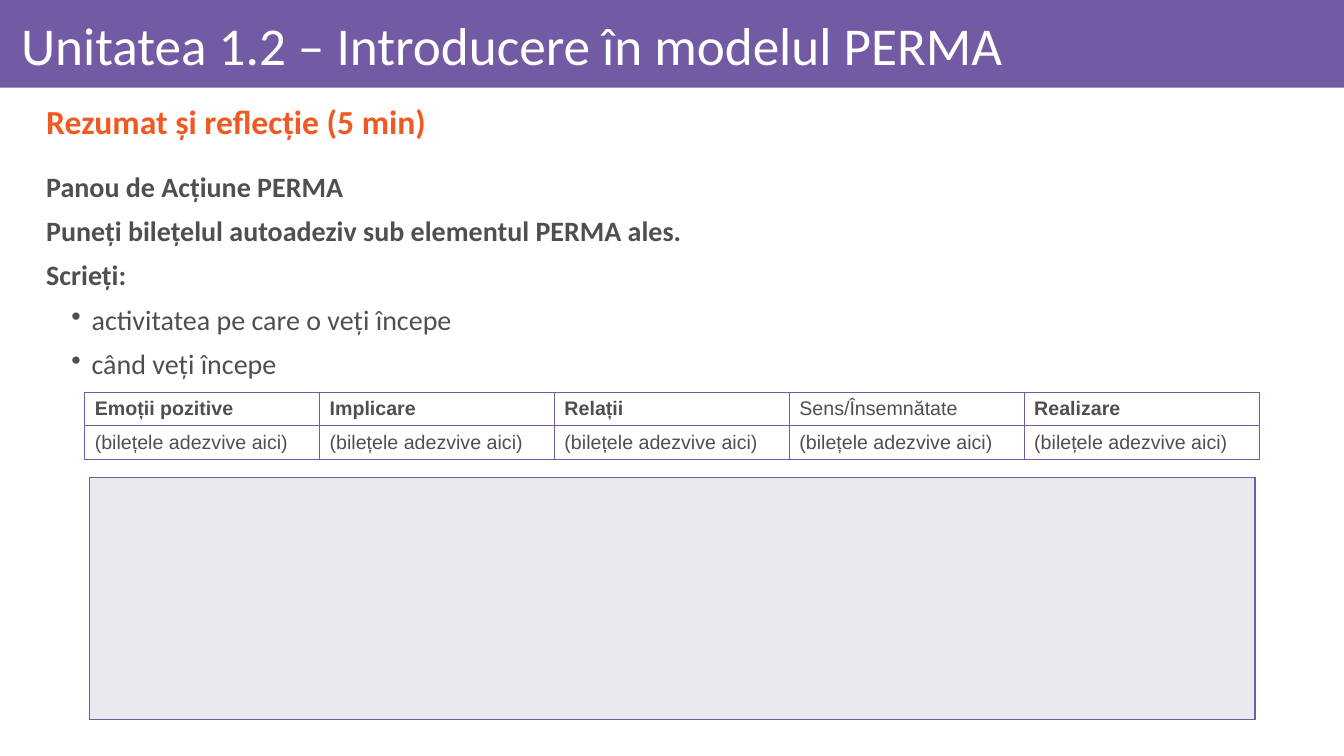
from dataclasses import dataclass

import pptx
import pptx.dml.color
import pptx.enum.shapes
import pptx.enum.text
import pptx.oxml.ns
import pptx.util
from lxml import etree

ALIGN = pptx.enum.text.PP_ALIGN
ANCHOR = pptx.enum.text.MSO_ANCHOR
Inches = pptx.util.Inches
SLIDE_WIDTH, SLIDE_HEIGHT = Inches(13.333), Inches(7.5)


@dataclass(frozen=True)
class Theme:
    purple: str = "735AA5"
    orange: str = "F05A22"
    grey: str = "4F4F50"
    white: str = "FFFFFF"
    lavender: str = "EBE9F0"
    text_font: str = "Calibri"
    table_font: str = "Arial"
    title_size: int = 38
    heading_size: int = 24
    body_size: int = 20
    table_size: int = 14


THEME = Theme()

# Boxes: left, top, width, height in percent of the slide
BANNER = (0, 0, 100, 11.6)
TITLE = (0.83, 1.2, 97.95, 10.4)
HEADING = (0.83, 12.4, 97.95, 8)
BODY = (0.83, 22.27, 96.08, 77.73)
ELEMENTS = (6.3, 51.87, 87.38, 8.53)
BOARD = (6.68, 63.2, 86.7, 32)

INSTRUCTIONS = [
    "Panou de Acțiune PERMA",
    "Puneți bilețelul autoadeziv sub elementul PERMA ales.",
    "Scrieți:",
]
BULLETS = ["activitatea pe care o veți începe", "când veți începe"]
PERMA = ["Emoții pozitive", "Implicare", "Relații", "Sens/Însemnătate", "Realizare"]
PLAIN_HEADER = "Sens/Însemnătate"
STICKY_HINT = "(bilețele adezvive aici)"


def place(box):
    left, top, width, height = (share / 100 for share in box)
    return (int(left * SLIDE_WIDTH), int(top * SLIDE_HEIGHT),
            int(width * SLIDE_WIDTH), int(height * SLIDE_HEIGHT))


def color(value):
    return pptx.dml.color.RGBColor.from_string(value)


def apply(target, values):
    for name, value in values.items():
        setattr(target, name, value)


def write(paragraph, text, size, text_color, font=THEME.text_font, bold=False):
    run = paragraph.add_run()
    run.text = text
    apply(run.font, {"size": pptx.util.Pt(size), "name": font, "bold": bold})
    run.font.color.rgb = color(text_color)


def indent(paragraph, margin, first_line, bullet=None):
    properties = paragraph._p.get_or_add_pPr()
    properties.set("marL", str(Inches(margin)))
    properties.set("indent", str(Inches(first_line)))
    if bullet:
        mark = etree.SubElement(properties, pptx.oxml.ns.qn("a:buChar"))
        mark.set("char", bullet)


def add_text_frame(slide, box, **values):
    frame = slide.shapes.add_textbox(*place(box)).text_frame
    apply(frame, {"word_wrap": True, **values})
    return frame


def add_paragraph(frame, first, **values):
    paragraph = frame.paragraphs[0] if first else frame.add_paragraph()
    apply(paragraph, {"line_spacing": 0.9, **values})
    return paragraph


def add_plain_table(slide, box, rows, columns, border_width):
    """Table with thin purple borders and no style bands."""
    table = slide.shapes.add_table(rows, columns, *place(box)).table
    apply(table, {"first_row": False, "horz_banding": False})
    for cell in table.iter_cells():
        properties = cell._tc.get_or_add_tcPr()
        for side in ("a:lnL", "a:lnR", "a:lnT", "a:lnB"):
            line = etree.SubElement(properties, pptx.oxml.ns.qn(side))
            line.set("w", str(pptx.util.Pt(border_width)))
            fill = etree.SubElement(line, pptx.oxml.ns.qn("a:solidFill"))
            etree.SubElement(fill, pptx.oxml.ns.qn("a:srgbClr")).set("val", THEME.purple)
        cell.fill.background()
    return table


def add_banner(slide, banner_box, title_box):
    banner = slide.shapes.add_shape(pptx.enum.shapes.MSO_SHAPE.RECTANGLE, *place(banner_box))
    banner.shadow.inherit = False
    banner.fill.solid()
    banner.fill.fore_color.rgb = color(THEME.purple)
    banner.line.fill.background()
    frame = add_text_frame(slide, title_box, vertical_anchor=ANCHOR.MIDDLE,
                           margin_right=Inches(0.06), margin_top=Inches(0.06),
                           margin_bottom=Inches(0.06))
    write(add_paragraph(frame, True), "Unitatea 1.2 – Introducere în modelul PERMA",
          THEME.title_size, THEME.white)


def add_heading(slide, box):
    frame = add_text_frame(slide, box, vertical_anchor=ANCHOR.MIDDLE)
    paragraph = add_paragraph(frame, True, alignment=ALIGN.JUSTIFY,
                              space_before=pptx.util.Pt(10))
    indent(paragraph, 0.5, -0.25)
    write(paragraph, "Rezumat și reflecție (5 min)", THEME.heading_size, THEME.orange, bold=True)


def add_instructions(slide, box):
    frame = add_text_frame(slide, box)
    for index, text in enumerate(INSTRUCTIONS + BULLETS):
        is_bullet = text in BULLETS
        paragraph = add_paragraph(frame, index == 0, space_before=pptx.util.Pt(10))
        if is_bullet:
            indent(paragraph, 0.7, -0.2, "•")
        else:
            indent(paragraph, 0.5, -0.25)
        write(paragraph, text, THEME.body_size, THEME.grey, bold=not is_bullet)


def add_elements_table(slide, box):
    table = add_plain_table(slide, box, 2, len(PERMA), 0.75)
    for column, element in enumerate(PERMA):
        for row, text in enumerate((element, STICKY_HINT)):
            cell = table.cell(row, column)
            apply(cell, {"vertical_anchor": ANCHOR.MIDDLE,
                         "margin_top": Inches(0.05), "margin_bottom": Inches(0.05)})
            write(cell.text_frame.paragraphs[0], text, THEME.table_size, THEME.grey,
                  THEME.table_font, bold=row == 0 and text != PLAIN_HEADER)


def add_sticky_board(slide, box):
    cell = add_plain_table(slide, box, 1, 1, 1).cell(0, 0)
    cell.fill.solid()
    cell.fill.fore_color.rgb = color(THEME.lavender)


def main():
    presentation = pptx.Presentation()
    apply(presentation, {"slide_width": SLIDE_WIDTH, "slide_height": SLIDE_HEIGHT})
    slide = presentation.slides.add_slide(presentation.slide_layouts[6])
    add_banner(slide, BANNER, TITLE)
    add_heading(slide, HEADING)
    add_instructions(slide, BODY)
    add_elements_table(slide, ELEMENTS)
    add_sticky_board(slide, BOARD)
    presentation.save("out.pptx")


if __name__ == "__main__":
    main()
